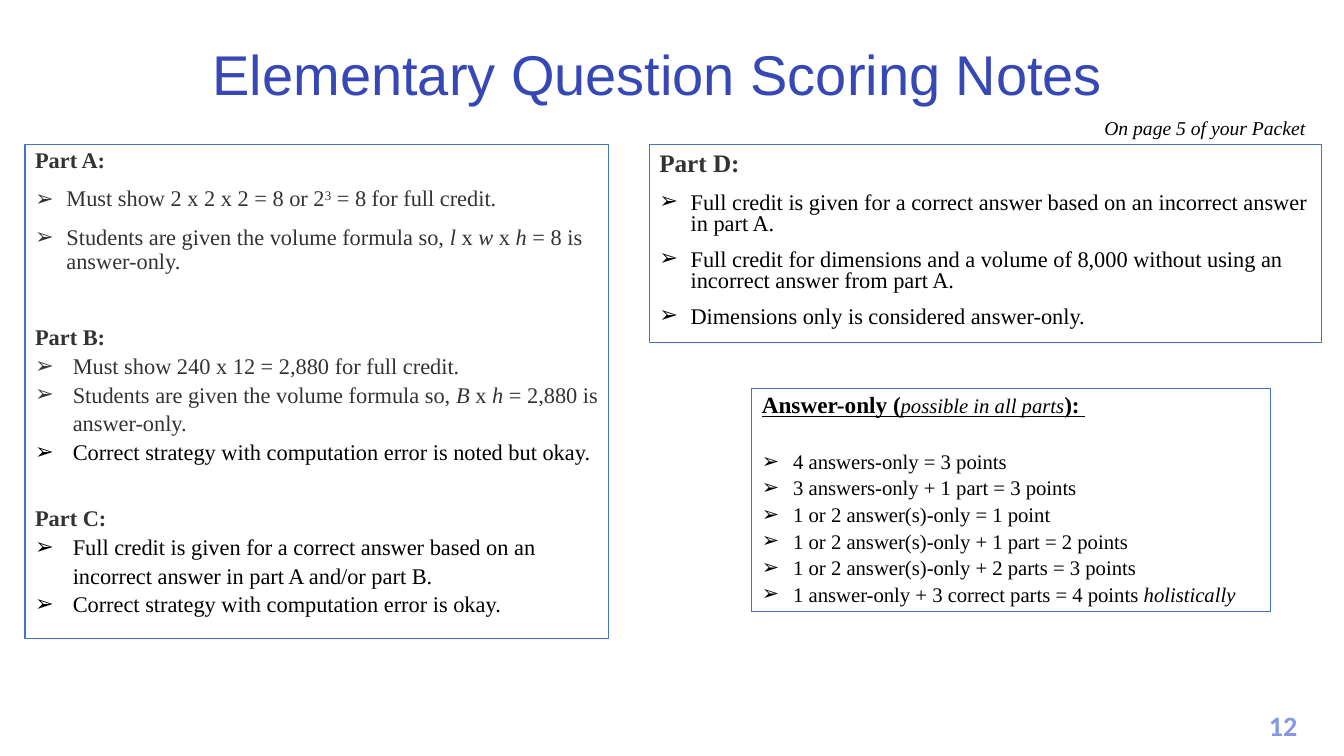
from lxml.etree import SubElement
from pptx import Presentation
from pptx.dml.color import RGBColor
from pptx.enum.text import MSO_ANCHOR, MSO_AUTO_SIZE, PP_ALIGN
from pptx.oxml.ns import qn
from pptx.util import Cm, Pt

COLORS = {
    "title": "3647B6",
    "number": "8397E7",
    "border": "4472C4",
    "gray": "333333",
    "black": "000000",
}
SERIF = "Times New Roman"


def add_text(shape, text, size=16, font=SERIF, color="black", bold=False,
             underline=False, mark="italic", mark_size=None, align=PP_ALIGN.LEFT,
             spacing=1.0, before=0, hang=0):
    frame = shape.text_frame
    paragraph = frame.paragraphs[0] if not frame.text else frame.add_paragraph()
    properties = paragraph._p.get_or_add_pPr()
    properties.set("marL", str(Cm(hang)))
    properties.set("indent", str(-Cm(hang)))
    if hang:
        SubElement(properties, qn("a:buFont"), typeface="Arial")
        SubElement(properties, qn("a:buChar"), char="➢")
    else:
        SubElement(properties, qn("a:buNone"))
    paragraph.alignment = align
    paragraph.line_spacing = spacing
    paragraph.space_before = Pt(before)
    paragraph.space_after = Pt(0)
    for index, part in enumerate(text.split("*")):
        if not part:
            continue
        marked = index % 2 == 1
        run = paragraph.add_run()
        run.text = part
        run.font.name = font
        run.font.size = Pt(mark_size if marked and mark_size else size)
        run.font.bold = bold and not marked
        run.font.underline = underline
        run.font.italic = marked and mark == "italic"
        run.font.color.rgb = RGBColor.from_string(COLORS[color])
        if marked and mark == "superscript":
            run._r.get_or_add_rPr().set("baseline", "30000")


def place(shape, left, top, width, height, anchor=MSO_ANCHOR.TOP, border=True):
    shape.left, shape.top = Cm(left), Cm(top)
    shape.width, shape.height = Cm(width), Cm(height)
    frame = shape.text_frame
    frame.word_wrap = True
    frame.auto_size = MSO_AUTO_SIZE.NONE
    frame.vertical_anchor = anchor
    if border:
        shape.line.color.rgb = RGBColor.from_string(COLORS["border"])
        shape.line.width = Pt(0.75)
    return shape


presentation = Presentation()
presentation.slide_width = Cm(33.87)
presentation.slide_height = Cm(19.05)
slide = presentation.slides.add_slide(presentation.slide_layouts[3])
title, parts_abc, part_d = list(slide.placeholders)[:3]
for placeholder in list(slide.placeholders)[3:]:
    placeholder.element.getparent().remove(placeholder.element)

place(title, 1.3, 0.61, 30.53, 2.24, anchor=MSO_ANCHOR.BOTTOM, border=False)
add_text(title, "Elementary Question Scoring Notes", size=40, font="Arial",
         color="title", align=PP_ALIGN.CENTER, spacing=0.9)

page_note = place(slide.shapes.add_textbox(0, 0, 0, 0), 27.58, 2.79, 6.27, 0.86, border=False)
add_text(page_note, "*On page 5 of your Packet*", size=14)

place(parts_abc, 0.63, 3.64, 14.71, 12.45)
add_text(parts_abc, "Part A:", color="gray", bold=True, spacing=0.9)
part_a_format = dict(color="gray", spacing=0.9, before=10, hang=0.79)
add_text(parts_abc, "Must show 2 x 2 x 2 = 8 or 2*3* = 8 for full credit.",
         mark="superscript", **part_a_format)
add_text(parts_abc, "Students are given the volume formula so, *l* x *w* x *h* = 8 is answer-only.",
         **part_a_format)

later_parts = [
    ("Part B:", 37, [
        ("Must show 240 x 12 = 2,880 for full credit.", "gray"),
        ("Students are given the volume formula so, *B* x *h* = 2,880 is answer-only.", "gray"),
        ("Correct strategy with computation error is noted but okay.", "black"),
    ]),
    ("Part C:", 30, [
        ("Full credit is given for a correct answer based on an incorrect answer "
         "in part A and/or part B.", "black"),
        ("Correct strategy with computation error is okay.", "black"),
    ]),
]
for heading, gap, notes in later_parts:
    add_text(parts_abc, heading, color="gray", bold=True, spacing=0.9, before=gap)
    for note, color in notes:
        add_text(parts_abc, note, color=color, spacing=1.07, hang=0.95)

place(part_d, 16.36, 3.64, 16.94, 5)
add_text(part_d, "Part D:", size=18, color="gray", bold=True, spacing=0.97)
for note in [
    "Full credit is given for a correct answer based on an incorrect answer in part A.",
    "Full credit for dimensions and a volume of 8,000 without using an incorrect answer from part A.",
    "Dimensions only is considered answer-only.",
]:
    add_text(part_d, note, spacing=0.8, before=10, hang=0.79)

answer_only = place(slide.shapes.add_textbox(0, 0, 0, 0), 18.95, 9.8, 13.06, 5.61)
add_text(answer_only, "Answer-only (*possible in all parts*): ", size=16.6, mark_size=14.8,
         bold=True, underline=True, spacing=0.9)
for index, rule in enumerate([
    "4 answers-only = 3 points",
    "3 answers-only + 1 part = 3 points",
    "1 or 2 answer(s)-only = 1 point",
    "1 or 2 answer(s)-only + 1 part = 2 points",
    "1 or 2 answer(s)-only + 2 parts = 3 points",
    "1 answer-only + 3 correct parts = 4 points *holistically*",
]):
    add_text(answer_only, rule, size=14.8, spacing=1.07, before=0 if index else 20, hang=0.79)

slide_number = place(slide.shapes.add_textbox(0, 0, 0, 0), 31.55, 17.73, 1.57, 1.12, border=False)
add_text(slide_number, "12", size=20, font="Calibri", color="number", bold=True,
         align=PP_ALIGN.CENTER)

presentation.save("out.pptx")
